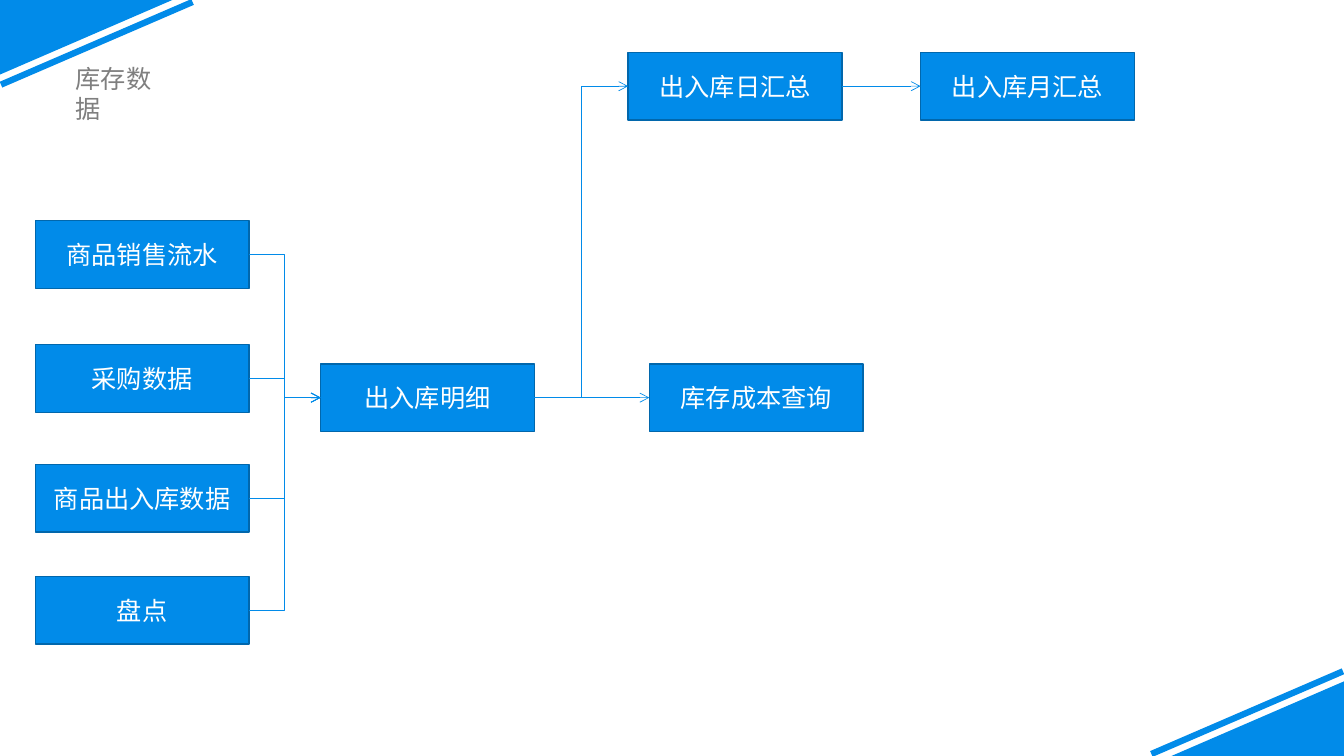
import pptx
import pptx.dml.color
import pptx.enum.shapes
import pptx.enum.text
import pptx.oxml
import pptx.oxml.ns
import pptx.util
from dataclasses import dataclass

Inches = pptx.util.Inches
Pt = pptx.util.Pt
RGB = pptx.dml.color.RGBColor.from_string
Connector = pptx.enum.shapes.MSO_CONNECTOR
Preset = pptx.enum.shapes.MSO_SHAPE
Align = pptx.enum.text.PP_ALIGN
Anchor = pptx.enum.text.MSO_ANCHOR
AutoSize = pptx.enum.text.MSO_AUTO_SIZE

TITLE = "库存数据"
STEPS = {
    "出入库明细": (3.18, 3.61),
    "库存成本查询": (6.44, 3.61),
    "出入库日汇总": (6.23, 0.52),
    "出入库月汇总": (9.13, 0.52),
    "商品销售流水": (0.35, 2.19),
    "采购数据": (0.35, 3.42),
    "商品出入库数据": (0.35, 4.61),
    "盘点": (0.35, 5.72),
}
FLOWS = [
    ("出入库明细", "库存成本查询"),
    ("出入库明细", "出入库日汇总"),
    ("出入库日汇总", "出入库月汇总"),
    ("商品销售流水", "出入库明细"),
    ("采购数据", "出入库明细"),
    ("商品出入库数据", "出入库明细"),
    ("盘点", "出入库明细"),
]
SLIDE_W, SLIDE_H = 13.33, 7.5
STEP_W, STEP_H = 2.12, 0.67
LEFT_SITE, RIGHT_SITE = 1, 3
CORNER = [(0, 0.74), (0, 0), (1.71, 0)]
STRIPE = [(0.01, 0.84), (1.91, 0.02)]


@dataclass(frozen=True)
class Theme:
    blue: str = "018BE9"
    edge: str = "0167AC"
    grey: str = "7F7F7F"
    white: str = "FFFFFF"
    font: str = "Arial"
    size: float = 18
    edge_width: float = 1
    flow_width: float = 0.5
    stripe_width: float = 4.5


theme = Theme()


def write(tf, text, color, align):
    tf.text = text
    p = tf.paragraphs[0]
    p.alignment = align
    font = p.runs[0].font
    font.name = theme.font
    font.size = Pt(theme.size)
    font.color.rgb = RGB(color)


def style_line(connector, width):
    connector.line.color.rgb = RGB(theme.blue)
    connector.line.width = Pt(width)
    connector._element.spPr.append(pptx.oxml.parse_xml(
        f'<a:effectLst {pptx.oxml.ns.nsdecls("a")}/>'))


def add_corner(s, turned):
    def place(points):
        return [(Inches(SLIDE_W - x if turned else x),
                 Inches(SLIDE_H - y if turned else y)) for x, y in points]

    start, *rest = place(CORNER)
    builder = s.shapes.build_freeform(*start, scale=1.0)
    builder.add_line_segments(rest, close=True)
    sp = builder.convert_to_shape()
    sp.shadow.inherit = False
    sp.fill.solid()
    sp.fill.fore_color.rgb = RGB(theme.blue)
    sp.line.fill.background()
    begin, end = place(STRIPE)
    stripe = s.shapes.add_connector(Connector.STRAIGHT, *begin, *end)
    style_line(stripe, theme.stripe_width)


def add_step(s, text, left, top):
    sp = s.shapes.add_shape(Preset.FLOWCHART_PROCESS, Inches(left), Inches(top),
                            Inches(STEP_W), Inches(STEP_H))
    sp.shadow.inherit = False
    sp.fill.solid()
    sp.fill.fore_color.rgb = RGB(theme.blue)
    sp.line.color.rgb = RGB(theme.edge)
    sp.line.width = Pt(theme.edge_width)
    sp.text_frame.vertical_anchor = Anchor.MIDDLE
    write(sp.text_frame, text, theme.white, Align.CENTER)
    return sp


def add_flow(s, source, target):
    kind = Connector.STRAIGHT if source.top == target.top else Connector.ELBOW
    flow = s.shapes.add_connector(kind, 0, 0, 0, 0)
    flow.begin_connect(source, RIGHT_SITE)
    flow.end_connect(target, LEFT_SITE)
    style_line(flow, theme.flow_width)
    flow.line._get_or_add_ln().append(pptx.oxml.parse_xml(
        f'<a:tailEnd {pptx.oxml.ns.nsdecls("a")} type="arrow"/>'))


def add_title(s):
    title = s.shapes.title
    title.left, title.top = Inches(0.65), Inches(0.58)
    title.width, title.height = Inches(1.2), Inches(0.4)
    tf = title.text_frame
    tf.word_wrap = False
    tf.auto_size = AutoSize.SHAPE_TO_FIT_TEXT
    tf.vertical_anchor = Anchor.TOP
    write(tf, TITLE, theme.grey, Align.LEFT)


def main():
    prs = pptx.Presentation()
    prs.slide_width, prs.slide_height = Inches(SLIDE_W), Inches(SLIDE_H)
    s = prs.slides.add_slide(prs.slide_layouts[5])
    for turned in (True, False):
        add_corner(s, turned)
    add_title(s)
    steps = {text: add_step(s, text, *spot) for text, spot in STEPS.items()}
    for source, target in FLOWS:
        add_flow(s, steps[source], steps[target])
    prs.save("out.pptx")


if __name__ == "__main__":
    main()
